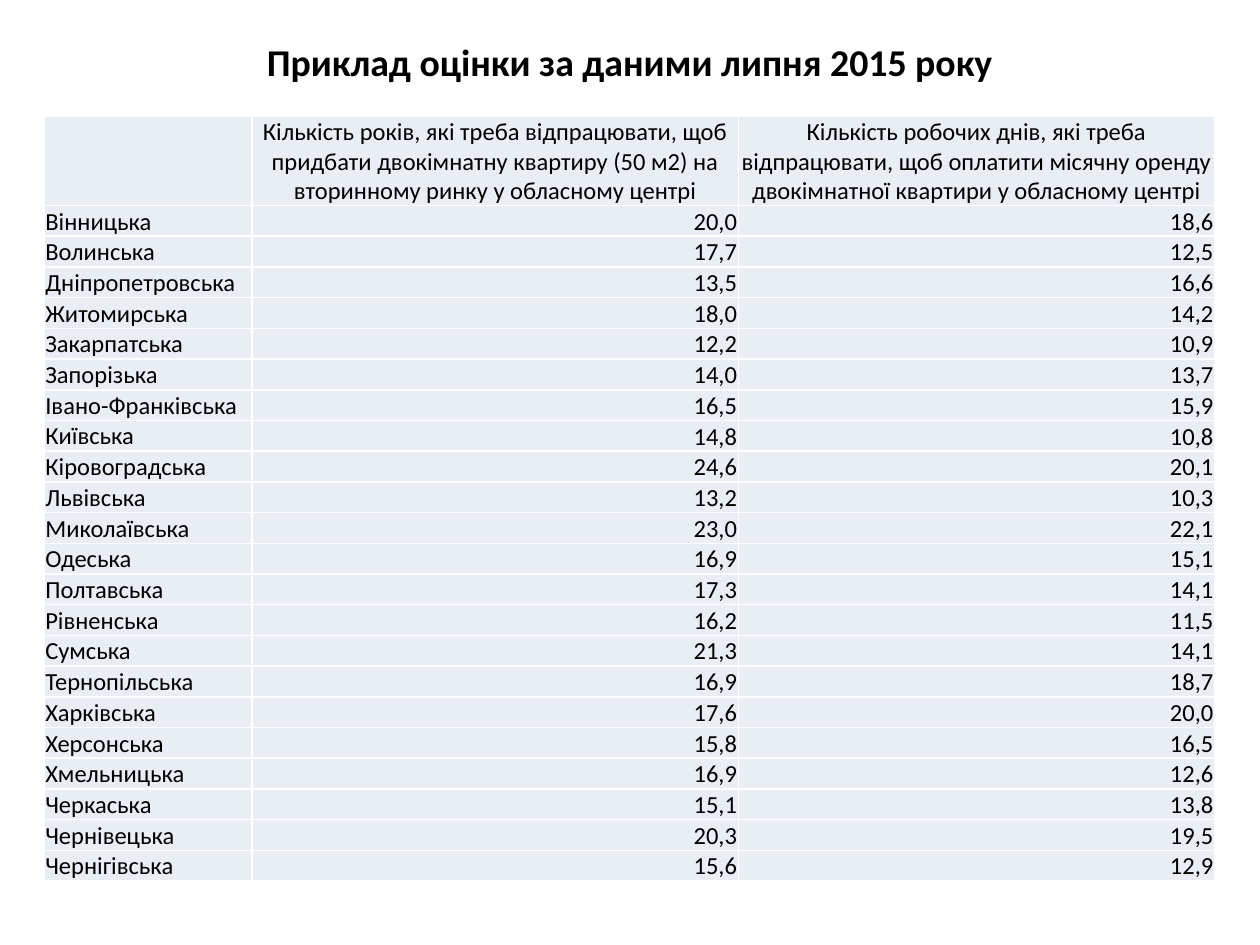
from lxml import etree
from pptx import Presentation
from pptx import util as u
from pptx.dml.color import RGBColor
from pptx.enum import text
from pptx.oxml.ns import qn

HEADINGS = (
    "",
    "Кількість років, які треба відпрацювати, щоб придбати двокімнатну "
    "квартиру (50 м2) на вторинному ринку у обласному центрі",
    "Кількість робочих днів, які треба відпрацювати, щоб оплатити місячну "
    "оренду двокімнатної квартири у обласному центрі",
)
REGIONS = [
    ("Вінницька", "20,0", "18,6"),
    ("Волинська", "17,7", "12,5"),
    ("Дніпропетровська", "13,5", "16,6"),
    ("Житомирська", "18,0", "14,2"),
    ("Закарпатська", "12,2", "10,9"),
    ("Запорізька", "14,0", "13,7"),
    ("Івано-Франківська", "16,5", "15,9"),
    ("Київська", "14,8", "10,8"),
    ("Кіровоградська", "24,6", "20,1"),
    ("Львівська", "13,2", "10,3"),
    ("Миколаївська", "23,0", "22,1"),
    ("Одеська", "16,9", "15,1"),
    ("Полтавська", "17,3", "14,1"),
    ("Рівненська", "16,2", "11,5"),
    ("Сумська", "21,3", "14,1"),
    ("Тернопільська", "16,9", "18,7"),
    ("Харківська", "17,6", "20,0"),
    ("Херсонська", "15,8", "16,5"),
    ("Хмельницька", "16,9", "12,6"),
    ("Черкаська", "15,1", "13,8"),
    ("Чернівецька", "20,3", "19,5"),
    ("Чернігівська", "15,6", "12,9"),
]


def color(hex_code):
    return RGBColor.from_string(hex_code)


class Deck:
    """Style and current slide; lengths are percentages of the slide's size."""

    font, ink, cell_fill, rule = "Calibri", "000000", "E9EDF4", "FFFFFF"

    def __init__(self, width, height):
        self.presentation = Presentation()
        self.presentation.slide_width = u.Inches(width)
        self.presentation.slide_height = u.Inches(height)
        self.slide = self.presentation.slides.add_slide(self.presentation.slide_layouts[6])

    def across(self, percent):
        return round(self.presentation.slide_width * percent / 100)

    def down(self, percent):
        return round(self.presentation.slide_height * percent / 100)

    def set_words(self, frame, words, size, align, bold=False):
        frame.text = words
        paragraph = frame.paragraphs[0]
        paragraph.alignment = align
        for styled in (paragraph, *paragraph.runs):
            styled.font.name = self.font
            styled.font.size = u.Pt(size)
            styled.font.bold = bold
            styled.font.color.rgb = color(self.ink)

    def title(self, words, left, top, width, height, size):
        box = self.slide.shapes.add_textbox(
            self.across(left), self.down(top), self.across(width), self.down(height))
        frame = box.text_frame
        frame.word_wrap = True
        frame.margin_top = frame.margin_bottom = 0
        frame.vertical_anchor = text.MSO_ANCHOR.MIDDLE
        self.set_words(frame, words, size, text.PP_ALIGN.CENTER, bold=True)

    def borders(self, cell, points):
        properties = cell._tc.get_or_add_tcPr()
        for position, side in enumerate(("lnL", "lnR", "lnT", "lnB")):
            line = etree.Element(qn(f"a:{side}"), w=str(u.Pt(points)))
            fill = etree.SubElement(line, qn("a:solidFill"))
            etree.SubElement(fill, qn("a:srgbClr"), val=self.rule)
            properties.insert(position, line)

    def cell(self, cell, words, size, align, anchor):
        cell.margin_left = cell.margin_right = cell.margin_top = u.Inches(0.01)
        cell.margin_bottom = 0
        cell.vertical_anchor = anchor
        cell.fill.solid()
        cell.fill.fore_color.rgb = color(self.cell_fill)
        self.borders(cell, 1)
        self.set_words(cell.text_frame, words, size, align)

    def table(self, headings, records, left, top, widths, heading_height, body_height, size):
        """Centred headings, then names on the left and figures on the right."""
        table = self.slide.shapes.add_table(
            len(records) + 1, len(headings), self.across(left), self.down(top),
            self.across(sum(widths)), self.down(heading_height + body_height)).table
        table.first_row = table.horz_banding = False
        for column, width in zip(table.columns, widths):
            column.width = self.across(width)
        heights = [heading_height] + [body_height / len(records)] * len(records)
        for row, height in zip(table.rows, heights):
            row.height = self.down(height)

        middle, bottom = text.MSO_ANCHOR.MIDDLE, text.MSO_ANCHOR.BOTTOM
        for r, record in enumerate([headings, *records]):
            for c, words in enumerate(record):
                if r == 0:
                    align, anchor = text.PP_ALIGN.CENTER, middle
                elif c == 0:
                    align, anchor = text.PP_ALIGN.LEFT, bottom
                else:
                    align, anchor = text.PP_ALIGN.RIGHT, middle
                self.cell(table.cell(r, c), words, size, align, anchor)


def main():
    deck = Deck(10, 7.5)
    deck.title("Приклад оцінки за даними липня 2015 року", 5, 4, 90, 5, size=21.6)
    deck.table(HEADINGS, REGIONS, left=3.5, top=12.25, widths=(16.5, 38.6, 37.8),
               heading_height=9.5, body_height=71.2, size=14)
    deck.presentation.save("out.pptx")


if __name__ == "__main__":
    main()
